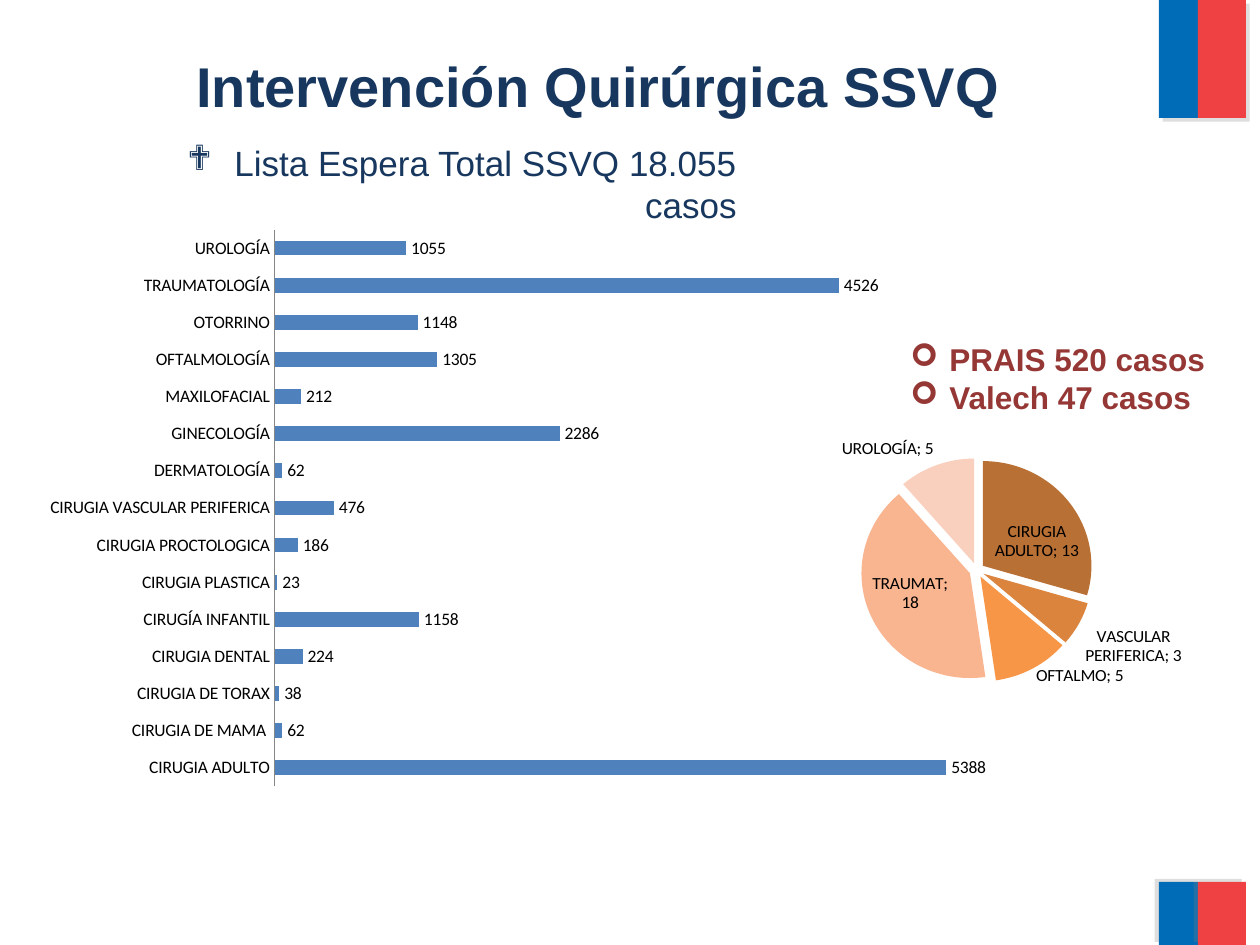
from dataclasses import dataclass

from lxml import etree
from pptx import Presentation
from pptx import util as u
from pptx.chart import data as chart_data
from pptx.dml.color import RGBColor
from pptx.enum import chart as ch, shapes, text
from pptx.oxml import parse_xml
from pptx.oxml.ns import nsdecls, qn

PX_PER_INCH = 126


@dataclass(frozen=True)
class Theme:
    heading_font: str = "Arial"
    chart_font: str = "Calibri"
    navy: str = "17375E"
    maroon: str = "953735"
    flag_blue: str = "006CB7"
    flag_red: str = "EF4144"
    bar: str = "4F81BD"
    axis: str = "868686"
    black: str = "000000"
    white: str = "FFFFFF"
    shadow: str = "808080"
    pie: tuple = ("B97034", "DB843D", "F79646", "F9B590", "F9CFBD")
    title_size: int = 32
    subtitle_size: int = 20
    note_size: int = 18
    chart_size: int = 10


THEME = Theme()

WAITING_LIST = {
    "CIRUGIA ADULTO": 5388, "CIRUGIA DE MAMA ": 62, "CIRUGIA DE TORAX": 38,
    "CIRUGIA DENTAL": 224, "CIRUGÍA INFANTIL": 1158, "CIRUGIA PLASTICA": 23,
    "CIRUGIA PROCTOLOGICA": 186, "CIRUGIA VASCULAR PERIFERICA": 476,
    "DERMATOLOGÍA": 62, "GINECOLOGÍA": 2286, "MAXILOFACIAL": 212,
    "OFTALMOLOGÍA": 1305, "OTORRINO": 1148, "TRAUMATOLOGÍA": 4526,
    "UROLOGÍA": 1055,
}
VALECH_CASES = {
    "CIRUGIA ADULTO": 13, "VASCULAR PERIFERICA": 3, "OFTALMOLOGÍA": 5,
    "TRAUMATOLOGÍA": 18, "UROLOGÍA": 5,
}
SHORT_LABELS = {2: "OFTALMO; 5", 3: "TRAUMAT; 18"}


def px(length):
    return u.Emu(round(length * u.Inches(1) / PX_PER_INCH))


def box(left, top, width, height):
    return [px(length) for length in (left, top, width, height)]


def color(value):
    return RGBColor.from_string(value)


def apply(target, **values):
    for name, value in values.items():
        setattr(target, name, value)


def style_font(font, name, size, rgb, bold=False):
    apply(font, name=name, size=u.Pt(size), bold=bold)
    font.color.rgb = color(rgb)


def add_flag_block(slide, bounds, fill, shadow_angle):
    block = slide.shapes.add_shape(shapes.MSO_SHAPE.RECTANGLE, *box(*bounds))
    block.fill.solid()
    block.fill.fore_color.rgb = color(fill)
    block.line.fill.background()
    block._element.spPr.append(parse_xml(
        f'<a:effectLst {nsdecls("a")}><a:outerShdw blurRad="0" dist="{u.Pt(3)}" '
        f'dir="{shadow_angle * 60000}" algn="ctr" rotWithShape="0">'
        f'<a:srgbClr val="{THEME.shadow}"><a:alpha val="25000"/></a:srgbClr>'
        '</a:outerShdw></a:effectLst>'))


def set_bullet(paragraph, character, indent):
    properties = paragraph._p.get_or_add_pPr()
    properties.set("marL", str(px(indent)))
    properties.set("indent", str(-px(indent)))
    font = etree.SubElement(properties, qn("a:buFont"))
    font.set("typeface", "Wingdings")
    bullet = etree.SubElement(properties, qn("a:buChar"))
    bullet.set("char", character)


def add_text(slide, bounds, lines, size, rgb, bold=False, wrap=True,
             align=text.PP_ALIGN.LEFT, bullet=None, indent=0):
    frame = slide.shapes.add_textbox(*box(*bounds)).text_frame
    apply(frame, word_wrap=wrap, auto_size=text.MSO_AUTO_SIZE.SHAPE_TO_FIT_TEXT)
    frame.text = "\n".join(lines)
    for paragraph in frame.paragraphs:
        paragraph.alignment = align
        style_font(paragraph.runs[0].font, THEME.heading_font, size, rgb, bold)
        if bullet:
            set_bullet(paragraph, bullet, indent)


def add_chart(slide, kind, bounds, values):
    """Add a one-series chart without title or legend."""
    data = chart_data.CategoryChartData()
    data.categories = list(values)
    data.add_series("Series 1", list(values.values()))
    chart = slide.shapes.add_chart(kind, *box(*bounds), data).chart
    apply(chart, has_title=False, has_legend=False)
    style_font(chart.font, THEME.chart_font, THEME.chart_size, THEME.black)
    return chart


def add_bar_chart(slide, bounds, values):
    chart = add_chart(slide, ch.XL_CHART_TYPE.BAR_CLUSTERED, bounds, values)
    apply(chart.value_axis, visible=False, has_major_gridlines=False, minimum_scale=0)
    apply(chart.category_axis, major_tick_mark=ch.XL_TICK_MARK.NONE)
    chart.category_axis.format.line.color.rgb = color(THEME.axis)
    plot = chart.plots[0]
    apply(plot, gap_width=150, overlap=-25, vary_by_categories=False, has_data_labels=True)
    apply(plot.data_labels, show_value=True, position=ch.XL_LABEL_POSITION.OUTSIDE_END)
    fill = plot.series[0].format.fill
    fill.solid()
    fill.fore_color.rgb = color(THEME.bar)


def set_inner_plot(chart, x, y, w, h):
    plot_area = chart._chartSpace.chart.plotArea
    for layout in plot_area.findall(qn("c:layout")):
        plot_area.remove(layout)
    sizes = "".join(f'<c:{name} val="{value}"/>'
                    for name, value in zip("xywh", (x, y, w, h)))
    plot_area.insert(0, parse_xml(
        f'<c:layout {nsdecls("c")}><c:manualLayout><c:layoutTarget val="inner"/>'
        f'<c:xMode val="edge"/><c:yMode val="edge"/>{sizes}'
        '</c:manualLayout></c:layout>'))


def add_pie_chart(slide, bounds, values, short_labels):
    chart = add_chart(slide, ch.XL_CHART_TYPE.PIE, bounds, values)
    set_inner_plot(chart, 0.09, 0.1, 0.91, 0.89)
    plot = chart.plots[0]
    plot.vary_by_categories = True
    series = plot.series[0]
    for index, rgb in enumerate(THEME.pie):
        fill = series.points[index].format.fill
        fill.solid()
        fill.fore_color.rgb = color(rgb)
    explosion = parse_xml(f'<c:explosion {nsdecls("c")} val="7"/>')
    series._element.find(qn("c:dPt")).addprevious(explosion)

    labels = series.data_labels
    apply(labels, show_value=True, show_category_name=True, show_percentage=False,
          position=ch.XL_LABEL_POSITION.BEST_FIT)
    style_font(labels.font, THEME.chart_font, THEME.chart_size, THEME.black)
    for index, label_text in short_labels.items():
        label = series.points[index].data_label
        label.text_frame.text = label_text
        label.position = ch.XL_LABEL_POSITION.BEST_FIT
        run = label.text_frame.paragraphs[0].runs[0]
        style_font(run.font, THEME.chart_font, THEME.chart_size, THEME.black)
    for flag in series._element.iter(qn("c:showBubbleSize")):
        separator = etree.Element(qn("c:separator"))
        separator.text = "; "
        flag.addnext(separator)


def main():
    presentation = Presentation()
    apply(presentation, slide_width=u.Inches(10), slide_height=u.Inches(7.5))
    slide = presentation.slides.add_slide(presentation.slide_layouts[6])

    for top, height, angle in ((0, 118, 45), (882, 63, 215)):
        add_flag_block(slide, (1159, top, 39, height), THEME.flag_blue, angle)
        add_flag_block(slide, (1198, top, 48, height), THEME.flag_red, angle)

    add_text(slide, (184, 45, 835, 81), ["Intervención Quirúrgica SSVQ"],
             THEME.title_size, THEME.navy, bold=True, wrap=False)
    add_text(slide, (74, 135, 675, 97), ["Lista Espera Total SSVQ 18.055 casos"],
             THEME.subtitle_size, THEME.navy, align=text.PP_ALIGN.RIGHT,
             bullet="❖", indent=47)
    add_bar_chart(slide, (30, 218, 1013, 580), WAITING_LIST)
    add_pie_chart(slide, (620, 433, 655, 261), VALECH_CASES, SHORT_LABELS)
    add_text(slide, (898, 334, 326, 89), ["PRAIS 520 casos", "Valech 47 casos"],
             THEME.note_size, THEME.maroon, bold=True, bullet="➢", indent=39)

    presentation.save("out.pptx")


if __name__ == "__main__":
    main()
